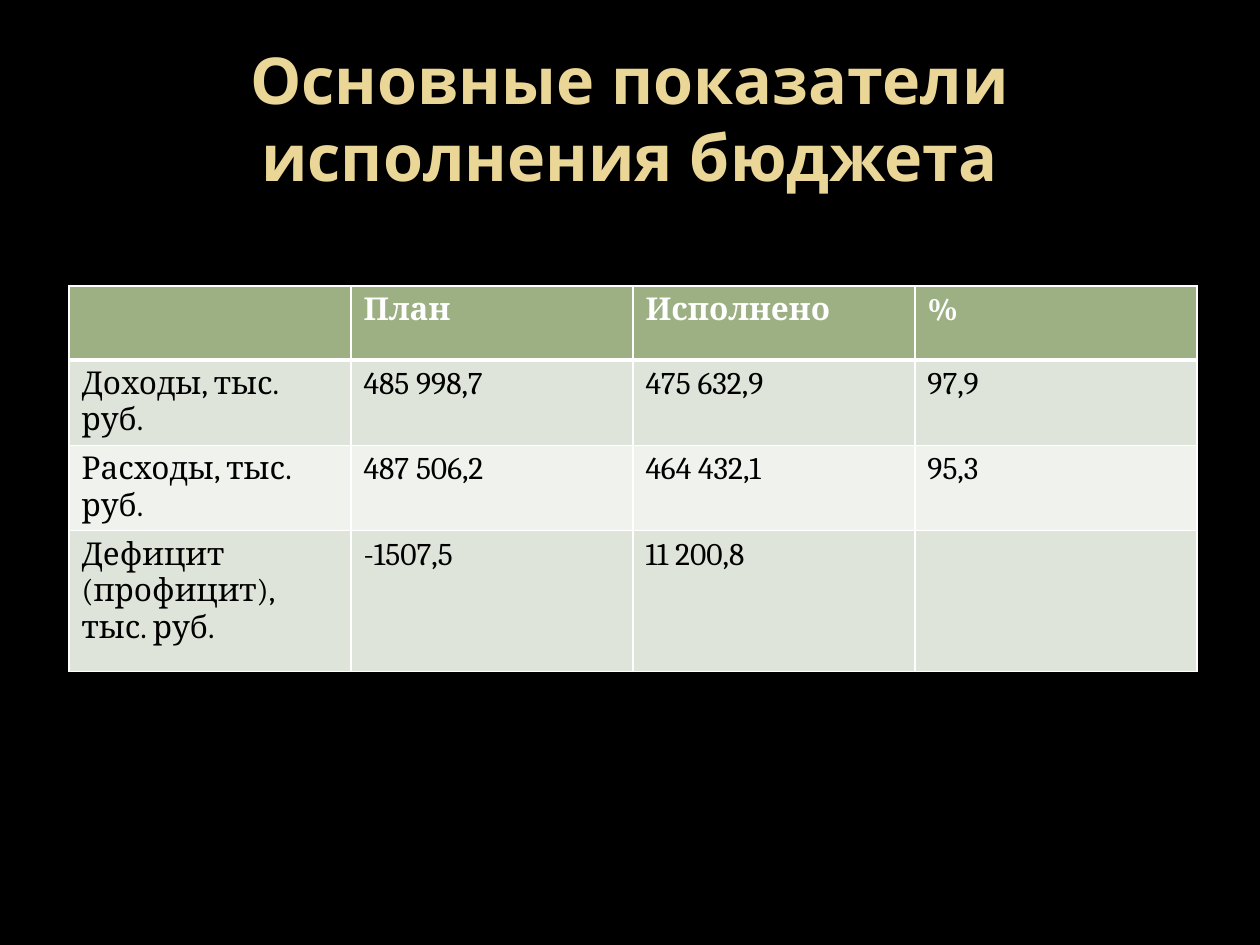
from lxml.etree import SubElement
from pptx import Presentation
from pptx.dml.color import RGBColor
from pptx.enum.text import MSO_ANCHOR, MSO_AUTO_SIZE, PP_ALIGN
from pptx.oxml.ns import qn
from pptx.util import Pt

PX = 914400 // 126  # EMU per pixel


def color(value):
    return RGBColor.from_string(value)


def add_border(cell, side, points):
    line = SubElement(cell._tc.get_or_add_tcPr(), qn(f"a:{side}"), w=str(Pt(points)))
    fill = SubElement(line, qn("a:solidFill"))
    SubElement(fill, qn("a:srgbClr"), val="FFFFFF")


presentation = Presentation()
presentation.slide_width = 1260 * PX
presentation.slide_height = 945 * PX
slide = presentation.slides.add_slide(presentation.slide_layouts[5])
slide.background.fill.solid()
slide.background.fill.fore_color.rgb = color("000000")

# Title
title = slide.shapes.title
title.left, title.top, title.width, title.height = 63 * PX, 38 * PX, 1134 * PX, 158 * PX
frame = title.text_frame
frame.text = "Основные показатели исполнения бюджета"
frame.word_wrap = True
frame.auto_size = MSO_AUTO_SIZE.NONE
frame.vertical_anchor = MSO_ANCHOR.MIDDLE
paragraph = frame.paragraphs[0]
paragraph.alignment = PP_ALIGN.CENTER
paragraph.font.name = "Open Sans"
paragraph.font.size = Pt(36.9)
paragraph.font.bold = True
paragraph.font.color.rgb = color("EAD696")

# Budget table
rows = [
    ["", "План", "Исполнено", "%"],
    ["Доходы, тыс. руб.", "485 998,7", "475 632,9", "97,9"],
    ["Расходы, тыс. руб.", "487 506,2", "464 432,1", "95,3"],
    ["Дефицит (профицит), тыс. руб.", "-1507,5", "11 200,8", ""],
]
row_heights = [74, 74, 74, 141]
row_fills = ["9CB084", "DEE4D9", "EFF2ED", "DEE4D9"]
table = slide.shapes.add_table(
    len(rows), 4, 69 * PX, 286 * PX, 4 * 282 * PX, sum(row_heights) * PX
).table
for column in table.columns:
    column.width = 282 * PX

for row_index, values in enumerate(rows):
    table.rows[row_index].height = row_heights[row_index] * PX
    is_header = row_index == 0
    for column_index, value in enumerate(values):
        cell = table.cell(row_index, column_index)
        # Borders precede the fill, with a thick rule under the header
        for side in ("lnL", "lnR", "lnT", "lnB"):
            thick = (is_header and side == "lnB") or (row_index == 1 and side == "lnT")
            add_border(cell, side, 3 if thick else 1)
        cell.fill.solid()
        cell.fill.fore_color.rgb = color(row_fills[row_index])
        cell.text = value
        paragraph = cell.text_frame.paragraphs[0]
        paragraph.font.name = "Cambria"
        paragraph.font.size = Pt(18)
        paragraph.font.bold = is_header
        paragraph.font.color.rgb = color("FFFFFF" if is_header else "000000")

presentation.save("out.pptx")
